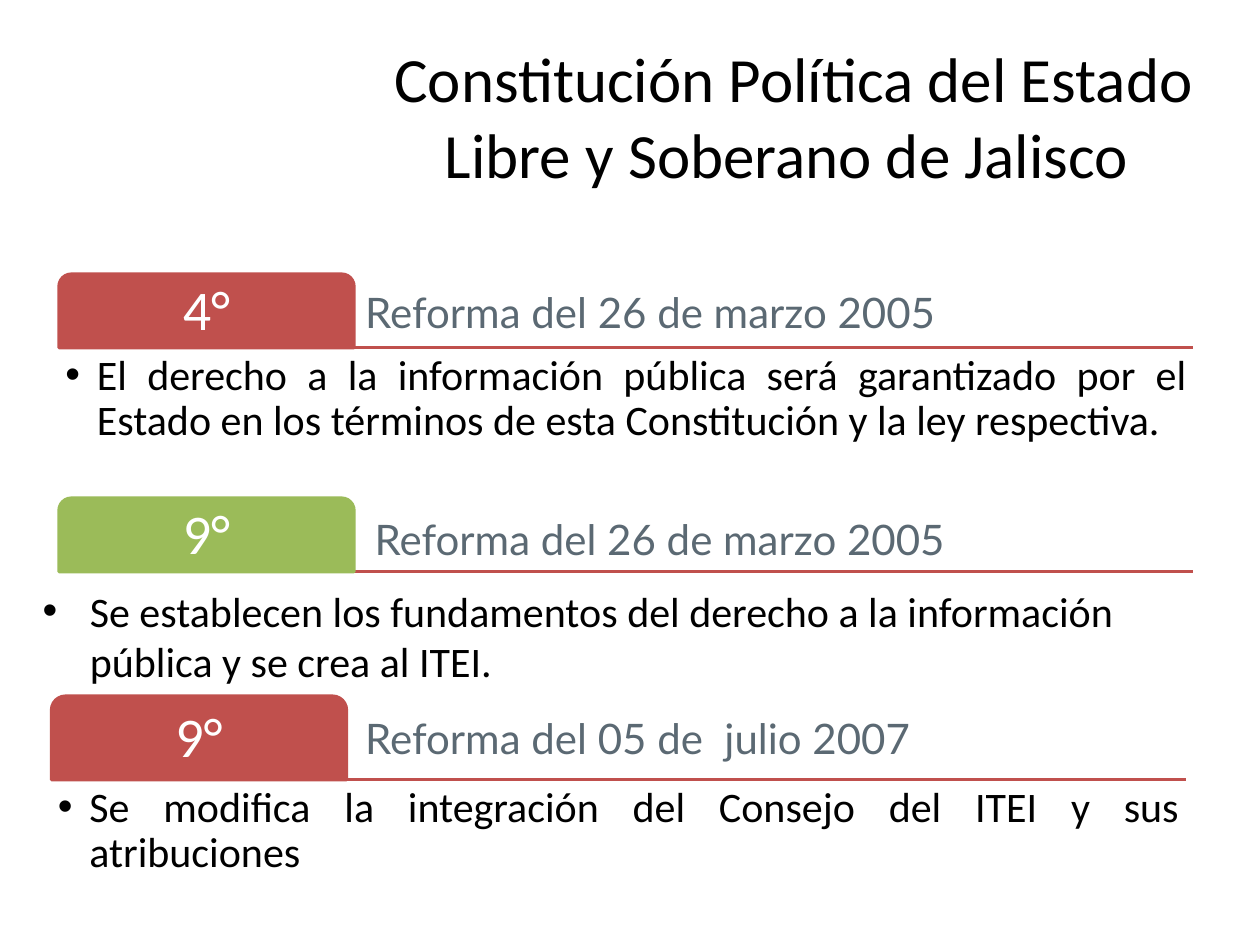
from lxml import etree
from pptx import Presentation
from pptx.dml.color import RGBColor
from pptx.enum.shapes import MSO_CONNECTOR, MSO_SHAPE
from pptx.enum.text import MSO_ANCHOR, PP_ALIGN
from pptx.oxml.ns import qn
from pptx.util import Pt

TAB = MSO_SHAPE.ROUND_2_SAME_RECTANGLE
STRAIGHT = MSO_CONNECTOR.STRAIGHT
TOP, MIDDLE = MSO_ANCHOR.TOP, MSO_ANCHOR.MIDDLE
LEFT, CENTER, JUSTIFY = PP_ALIGN.LEFT, PP_ALIGN.CENTER, PP_ALIGN.JUSTIFY

RED, GREEN, GRAY = "C0504D", "9BBB59", "5B6973"
BLACK, WHITE = "000000", "FFFFFF"
WIDTH, TAB_WIDTH = 648, 168.5


def color(code):
    return RGBColor.from_string(code)


def add_text(slide, box, text, size=24, font="Calibri", ink=BLACK, align=LEFT,
             anchor=TOP, inset=3.6, spacing=None, indent=0):
    shape = slide.shapes.add_textbox(*map(Pt, box))
    frame = shape.text_frame
    frame.word_wrap = True
    frame.vertical_anchor = anchor
    frame.margin_left = frame.margin_right = Pt(inset[0] if isinstance(inset, tuple) else inset)
    frame.margin_top = frame.margin_bottom = Pt(inset[1] if isinstance(inset, tuple) else inset)
    par = frame.paragraphs[0]
    par.text = text
    par.alignment = align
    if spacing:
        par.line_spacing = spacing
    if indent:
        add_bullet(par, indent)
    par.font.size = Pt(size)
    par.font.name = font
    par.font.color.rgb = color(ink)


def add_bullet(par, indent):
    props = par._p.get_or_add_pPr()
    props.set("marL", str(Pt(indent)))
    props.set("indent", str(-Pt(indent)))
    etree.SubElement(props, qn("a:buFont")).set("typeface", "Arial")
    etree.SubElement(props, qn("a:buChar")).set("char", "•")


def add_rule(slide, left, base):
    rule = slide.shapes.add_connector(STRAIGHT, Pt(left), Pt(base), Pt(left + WIDTH), Pt(base))
    rule.line.color.rgb = color(RED)
    rule.line.width = Pt(2)
    etree.SubElement(rule._element.spPr, qn("a:effectLst"))


def add_tab(slide, left, base, height, fill, text):
    top = base - height
    tab = slide.shapes.add_shape(TAB, Pt(left), Pt(top), Pt(TAB_WIDTH), Pt(height))
    tab.adjustments[0] = 0.167
    tab.adjustments[1] = 0
    tab.shadow.inherit = False
    tab.fill.solid()
    tab.fill.fore_color.rgb = color(fill)
    tab.line.color.rgb = color(fill)
    tab.line.width = Pt(2)
    add_text(slide, (left + 2.2, top + 2, TAB_WIDTH - 4.4, height - 2), text, size=32,
             ink=WHITE, align=CENTER, anchor=MIDDLE, inset=5, spacing=0.9)


def add_reform(slide, left, base, height, fill, article, label, spot):
    add_rule(slide, left, base)
    add_tab(slide, left, base, height, fill, article)
    add_text(slide, (*spot, 420, 51), label, font="Lato", ink=GRAY, inset=(7.2, 3.6))


def main():
    deck = Presentation()
    deck.slide_width, deck.slide_height = Pt(720), Pt(540)
    slide = deck.slides.add_slide(deck.slide_layouts[6])

    # Title
    add_text(slide, (218, 15, 471, 102),
             "Constitución Política del Estado Libre y Soberano de Jalisco ",
             size=36, align=CENTER, anchor=MIDDLE, inset=(7.2, 3.6))

    # Headings: left, base line, tab height, fill, article, label, label spot
    reforms = [
        (33.8, 198.7, 42, RED, "4°", "Reforma del 26 de marzo 2005", (201.6, 160)),
        (33.8, 326.7, 42, GREEN, "9°", "Reforma del 26 de marzo 2005", (207, 290)),
        (29.5, 445.5, 47.7, RED, "9°", "Reforma del 05 de  julio 2007", (201.6, 403.5)),
    ]
    for reform in reforms:
        add_reform(slide, *reform)

    # Descriptions
    block = {"align": JUSTIFY, "spacing": 0.9, "indent": 18}
    add_text(slide, (33.8, 198.7, WIDTH, 84),
             "El derecho a la información pública será garantizado por el Estado "
             "en los términos de esta Constitución y la ley respectiva.", **block)
    add_text(slide, (20, 330, WIDTH, 62.6),
             "Se establecen los fundamentos del derecho a la información pública "
             "y se crea al ITEI.", inset=4.3, indent=27)
    add_text(slide, (29.5, 445.5, WIDTH, 122),
             "Se modifica la integración del Consejo del ITEI y sus atribuciones ", **block)

    deck.save("out.pptx")


if __name__ == "__main__":
    main()
